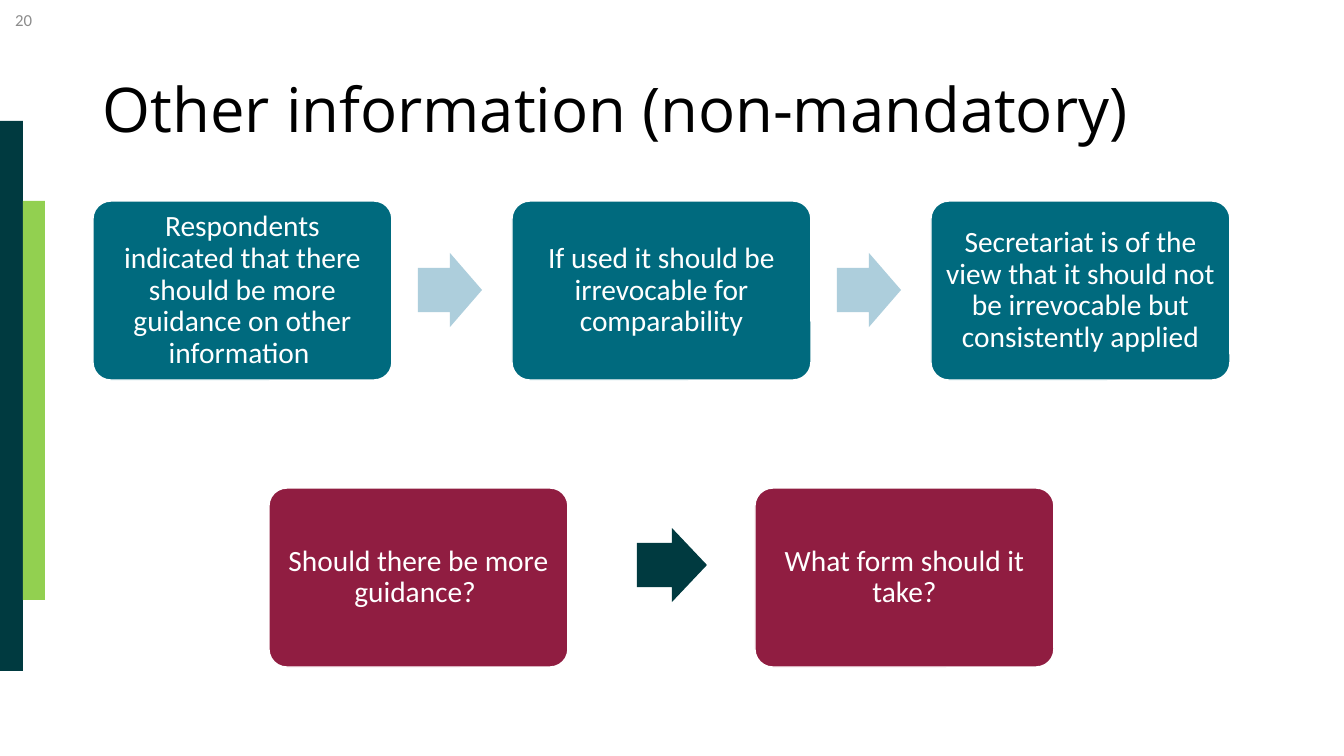
from pptx import Presentation
from pptx.dml.color import RGBColor
from pptx.enum.shapes import MSO_SHAPE
from pptx.enum.text import MSO_ANCHOR, PP_ALIGN
from pptx.util import Emu, Pt

COLORS = {"dark": "003A40", "green": "92D050", "teal": "006A7E", "pale": "ADCEDC",
          "wine": "901D41", "white": "FFFFFF", "black": "000000", "grey": "8C8C8C"}
EMU_PER_PX = 914400 / 100.8


def add_block(kind, box, fill, adjustments=(), line=None):
    sp = s.shapes.add_shape(kind, *[Emu(round(v * EMU_PER_PX)) for v in box])
    sp.shadow.inherit = False
    sp.fill.solid()
    sp.fill.fore_color.rgb = RGBColor.from_string(COLORS[fill])
    for i, value in enumerate(adjustments):
        sp.adjustments[i] = value
    if line:
        sp.line.color.rgb = RGBColor.from_string(COLORS[line])
        sp.line.width = Pt(1)
    else:
        sp.line.fill.background()
    return sp


def write_text(sp, text, color, align, spacing, font):
    tf = sp.text_frame
    tf.word_wrap = True
    tf.vertical_anchor = MSO_ANCHOR.MIDDLE
    p = tf.paragraphs[0]
    p.alignment, p.line_spacing = align, spacing
    r = p.add_run()
    r.text = text
    for name, value in font.items():
        setattr(r.font, name, value)
    r.font.color.rgb = RGBColor.from_string(COLORS[color])


prs = Presentation()
prs.slide_width, prs.slide_height = [Emu(round(v * EMU_PER_PX)) for v in (1344, 756)]
s = prs.slides.add_slide(prs.slide_layouts[6])

# Side bars
add_block(MSO_SHAPE.RECTANGLE, (0, 121, 23, 550), "dark")
add_block(MSO_SHAPE.RECTANGLE, (23, 201, 22, 399), "green")

# Title and slide number
labels = [
    ((93, 40, 1159, 146), "Other information (non-mandatory)", "black",
     PP_ALIGN.LEFT, 0.9, {"name": "Open Sans", "size": Pt(44)}),
    ((0, 0, 42, 40), "20", "grey",
     PP_ALIGN.RIGHT, 1.0, {"name": "Calibri", "size": Pt(12)}),
]
for box, *text_format in labels:
    sp = s.shapes.add_textbox(*[Emu(round(v * EMU_PER_PX)) for v in box])
    write_text(sp, *text_format)

# Two rows of rounded boxes: left, top, step, fill, texts
rows = [
    (93, 201, 419, "teal", [
        "Respondents indicated that there should be more guidance on other information ",
        "If used it should be irrevocable for comparability",
        "Secretariat is of the view that it should not be irrevocable but consistently applied"]),
    (269, 488, 486, "wine", [
        "Should there be more guidance? ",
        "What form should it take?"]),
]
for left, top, step, fill, texts in rows:
    for i, text in enumerate(texts):
        sp = add_block(MSO_SHAPE.ROUNDED_RECTANGLE, (left + i * step, top, 299, 179),
                       fill, (0.1,), "white")
        for side in ("left", "top", "right", "bottom"):
            setattr(sp.text_frame, f"margin_{side}", Emu(round(9 * EMU_PER_PX)))
        write_text(sp, text, "white", PP_ALIGN.CENTER, 0.9,
                   {"name": "Calibri", "size": Pt(21)})

# Arrows between the boxes
for left, top, width, fill in [(418, 253, 64, "pale"), (837, 253, 64, "pale"),
                               (637, 528, 70, "dark")]:
    add_block(MSO_SHAPE.RIGHT_ARROW, (left, top, width, 74), fill, (0.6, 0.5))

prs.save("out.pptx")
